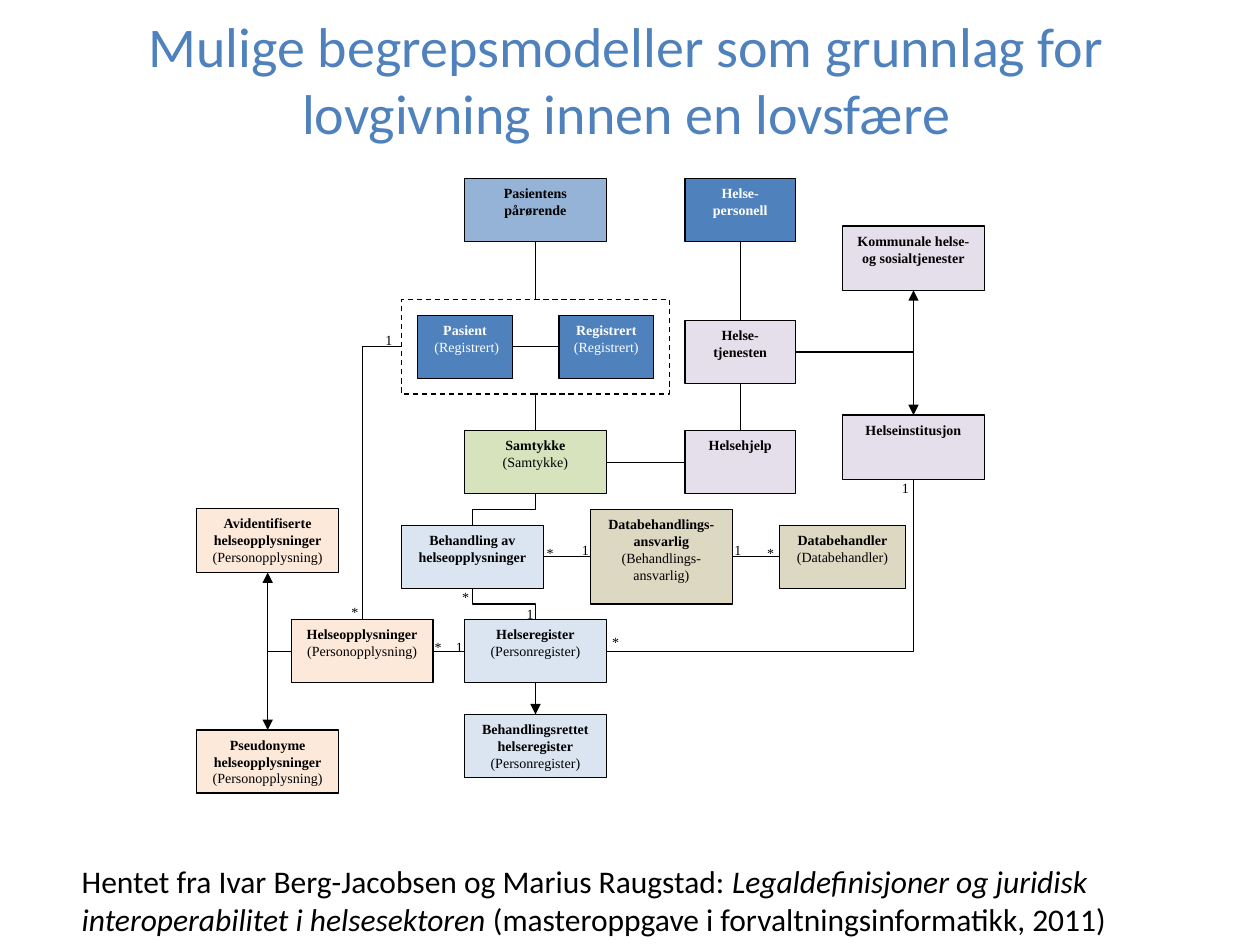
import pptx
import pptx.dml.color
import pptx.enum.dml
import pptx.enum.shapes
import pptx.enum.text
import pptx.oxml.ns
import pptx.util
from lxml import etree

Pt = pptx.util.Pt
ALIGN = pptx.enum.text.PP_ALIGN
ANCHOR = pptx.enum.text.MSO_ANCHOR
AUTO_SIZE = pptx.enum.text.MSO_AUTO_SIZE
CONNECTOR = pptx.enum.shapes.MSO_CONNECTOR

COLORS = {
    "black": "000000", "white": "FFFFFF", "blue": "4F81BD", "sky": "95B3D7",
    "ice": "DBE5F1", "peach": "FDE9D9", "sand": "DDD8C2", "lilac": "E5DFEC",
    "green": "D6E3BC",
}
# Connection sites of a rectangle: index and relative position
SITES = {"top": (0, 0.5, 0), "left": (1, 0, 0.5), "bottom": (2, 0.5, 1), "right": (3, 1, 0.5)}

# name: (left, top, width, height, fill, heading, legal term)
BOXES = {
    "relatives": (265.5, 102.2, 81, 36, "sky", "Pasientens pårørende", None),
    "staff": (391.5, 102.2, 63, 36, "blue", "Helse-personell", None),
    "municipal": (481.5, 129.2, 81, 36.7, "lilac", "Kommunale helse- og sosialtjenester", None),
    "person": (229.5, 171.2, 153, 54, None, None, None),
    "patient": (238.5, 180.2, 54.5, 36, "blue", "Pasient", " (Registrert)"),
    "registered": (319.5, 180.2, 54, 36, "blue", "Registrert", "(Registrert)"),
    "service": (391.5, 183.2, 63, 36, "lilac", "Helse-tjenesten", None),
    "institution": (481.5, 237.2, 81, 36.7, "lilac", "Helseinstitusjon", None),
    "consent": (265.5, 246.2, 81, 36, "green", "Samtykke", "(Samtykke)"),
    "care": (391.5, 246.2, 63, 36, "lilac", "Helsehjelp", None),
    "deidentified": (112.5, 290.5, 81, 36.7, "peach", "Avidentifiserte helseopplysninger", "(Personopplysning)"),
    "processing": (229.5, 300.2, 81, 36, "ice", "Behandling av helseopplysninger", None),
    "controller": (337.5, 291.2, 81, 54, "sand", "Databehandlings-ansvarlig", "(Behandlings-ansvarlig)"),
    "processor": (445.5, 300.2, 72, 36, "sand", "Databehandler", "(Databehandler)"),
    "data": (166.5, 354.2, 81, 36, "peach", "Helseopplysninger", "(Personopplysning)"),
    "register": (265.5, 354.2, 81, 36, "ice", "Helseregister", "(Personregister)"),
    "treatment": (265.5, 408.2, 81, 36, "ice", "Behandlingsrettet helseregister", "(Personregister)"),
    "pseudonymous": (112.5, 417.2, 81, 36, "peach", "Pseudonyme helseopplysninger", "(Personopplysning)"),
}
# (from, site, to, site, arrow)
STRAIGHT_LINKS = [
    ("relatives", "bottom", "person", "top", False),
    ("person", "bottom", "consent", "top", False),
    ("patient", "right", "registered", "left", False),
    ("staff", "bottom", "service", "top", False),
    ("service", "bottom", "care", "top", False),
    ("consent", "right", "care", "left", False),
    ("processing", "right", "controller", "left", False),
    ("controller", "right", "processor", "left", False),
    ("data", "right", "register", "left", False),
    ("register", "bottom", "treatment", "top", True),
]
CORNER_LINKS = [
    ("service", "right", "municipal", "bottom", True),
    ("service", "right", "institution", "top", True),
    ("data", "left", "deidentified", "bottom", True),
    ("data", "left", "pseudonymous", "top", True),
    ("person", "left", "data", "top", False),
    ("register", "right", "institution", "bottom", False),
]
STEP_LINKS = [("consent", "processing"), ("processing", "register")]
MULTIPLICITIES = {
    "1": [(508.3, 270.7), (253.4, 361.4), (293.8, 342.7), (325.4, 306),
          (213.1, 185.8), (412.6, 306)],
    "*": [(342.7, 358.6), (241.2, 361.4), (257, 332.6), (305.3, 307.4),
          (193.7, 341.3), (431.3, 307.4)],
}


class Diagram:
    """Style of the diagram and the slide it stands on."""
    box_font = {"name": "Times New Roman", "size": Pt(8)}
    title_font = {"name": "Calibri", "size": Pt(32)}
    source_font = {"name": "Calibri", "size": Pt(18)}
    line_width = Pt(0.75)

    def __init__(self, slide):
        self.slide = slide
        self.boxes = {}

    def color(self, name):
        return pptx.dml.color.RGBColor.from_string(COLORS[name])

    def add_text(self, paragraph, text, color, formats):
        run = paragraph.add_run()
        run.text = text
        for name, value in formats.items():
            setattr(run.font, name, value)
        run.font.color.rgb = self.color(color)

    def title(self, text):
        shape = self.slide.shapes.title
        place = {"left": 34, "top": 0, "width": 648, "height": 90}
        for name, value in place.items():
            setattr(shape, name, Pt(value))
        frame = shape.text_frame
        frame.auto_size = AUTO_SIZE.NONE
        frame.vertical_anchor = ANCHOR.MIDDLE
        frame.paragraphs[0].alignment = ALIGN.CENTER
        self.add_text(frame.paragraphs[0], text, "blue", self.title_font)

    def box(self, name, left, top, width, height, fill, heading, term):
        shape = self.slide.shapes.add_shape(
            pptx.enum.shapes.MSO_SHAPE.RECTANGLE, Pt(left), Pt(top), Pt(width), Pt(height))
        self.boxes[name] = shape
        shape.shadow.inherit = False
        shape.line.color.rgb = self.color("black")
        shape.line.width = self.line_width
        if fill is None:
            shape.fill.background()
            shape.line.dash_style = pptx.enum.dml.MSO_LINE.DASH
            return
        shape.fill.solid()
        shape.fill.fore_color.rgb = self.color(fill)
        frame = shape.text_frame
        frame.word_wrap = True
        frame.vertical_anchor = ANCHOR.TOP
        color = "white" if fill == "blue" else "black"
        paragraph = frame.paragraphs[0]
        paragraph.alignment = ALIGN.CENTER
        self.add_text(paragraph, heading, color, {**self.box_font, "bold": True})
        if term:
            paragraph = frame.add_paragraph()
            paragraph.alignment = ALIGN.CENTER
            self.add_text(paragraph, term, color, {**self.box_font, "bold": False})

    def site(self, name, side):
        """Return the point in the middle of one side of a box."""
        box = self.boxes[name]
        _, across, down = SITES[side]
        return int(box.left + across * box.width), int(box.top + down * box.height)

    def connector(self, kind, begin, end, arrow=False):
        connector = self.slide.shapes.add_connector(kind, *begin, *end)
        connector.line.color.rgb = self.color("black")
        connector.line.width = self.line_width
        properties = connector._element.spPr
        if arrow:
            line = properties.find(pptx.oxml.ns.qn("a:ln"))
            etree.SubElement(line, pptx.oxml.ns.qn("a:tailEnd")).set("type", "triangle")
        etree.SubElement(properties, pptx.oxml.ns.qn("a:effectLst"))
        return connector

    def straight(self, source, source_side, target, target_side, arrow):
        connector = self.connector(CONNECTOR.STRAIGHT, self.site(source, source_side),
                                   self.site(target, target_side), arrow)
        connector.begin_connect(self.boxes[source], SITES[source_side][0])
        connector.end_connect(self.boxes[target], SITES[target_side][0])

    def corner(self, source, source_side, target, target_side, arrow):
        """Draw a line that runs sideways and then turns once."""
        connector = self.connector(CONNECTOR.ELBOW, self.site(source, source_side),
                                   self.site(target, target_side), arrow)
        connector._element.spPr.find(pptx.oxml.ns.qn("a:prstGeom")).set("prst", "bentConnector2")

    def step(self, source, target):
        """Draw a line that runs down, sideways and down, as a turned elbow."""
        (x1, y1), (x2, y2) = self.site(source, "bottom"), self.site(target, "top")
        center_x, center_y = (x1 + x2) // 2, (y1 + y2) // 2
        half_height = abs(x2 - x1) // 2
        half_width = (y2 - y1) // 2 * (1 if x2 < x1 else -1)
        connector = self.connector(
            CONNECTOR.ELBOW, (center_x - half_width, center_y - half_height),
            (center_x + half_width, center_y + half_height))
        degrees = 90 if x2 < x1 else 270
        connector._element.spPr.find(pptx.oxml.ns.qn("a:xfrm")).set("rot", str(degrees * 60000))

    def text_box(self, left, top, width, height, lines, wrap, font):
        """Add a box with lines of (text, italic) runs."""
        frame = self.slide.shapes.add_textbox(Pt(left), Pt(top), Pt(width), Pt(height)).text_frame
        frame.word_wrap = wrap
        for index, runs in enumerate(lines):
            paragraph = frame.add_paragraph() if index else frame.paragraphs[0]
            for text, italic in runs:
                self.add_text(paragraph, text, "black", {**font, "italic": italic})


def main():
    presentation = pptx.Presentation()
    presentation.slide_width, presentation.slide_height = Pt(720), Pt(540)
    diagram = Diagram(presentation.slides.add_slide(presentation.slide_layouts[5]))
    diagram.title("Mulige begrepsmodeller som grunnlag for lovgivning innen en lovsfære")
    for name, values in BOXES.items():
        diagram.box(name, *values)
    for link in STRAIGHT_LINKS:
        diagram.straight(*link)
    for link in CORNER_LINKS:
        diagram.corner(*link)
    for link in STEP_LINKS:
        diagram.step(*link)
    for symbol, places in MULTIPLICITIES.items():
        for left, top in places:
            diagram.text_box(left, top, 21, 20, [[(symbol, False)]], True, diagram.box_font)
    diagram.text_box(39.6, 489, 603.4, 51, [
        [("Hentet fra Ivar Berg-Jacobsen og Marius Raugstad: ", False),
         ("Legaldefinisjoner og juridisk", True)],
        [("interoperabilitet i helsesektoren ", True),
         ("(masteroppgave i forvaltningsinformatikk, 2011)", False)],
    ], False, diagram.source_font)
    presentation.save("out.pptx")


if __name__ == "__main__":
    main()
